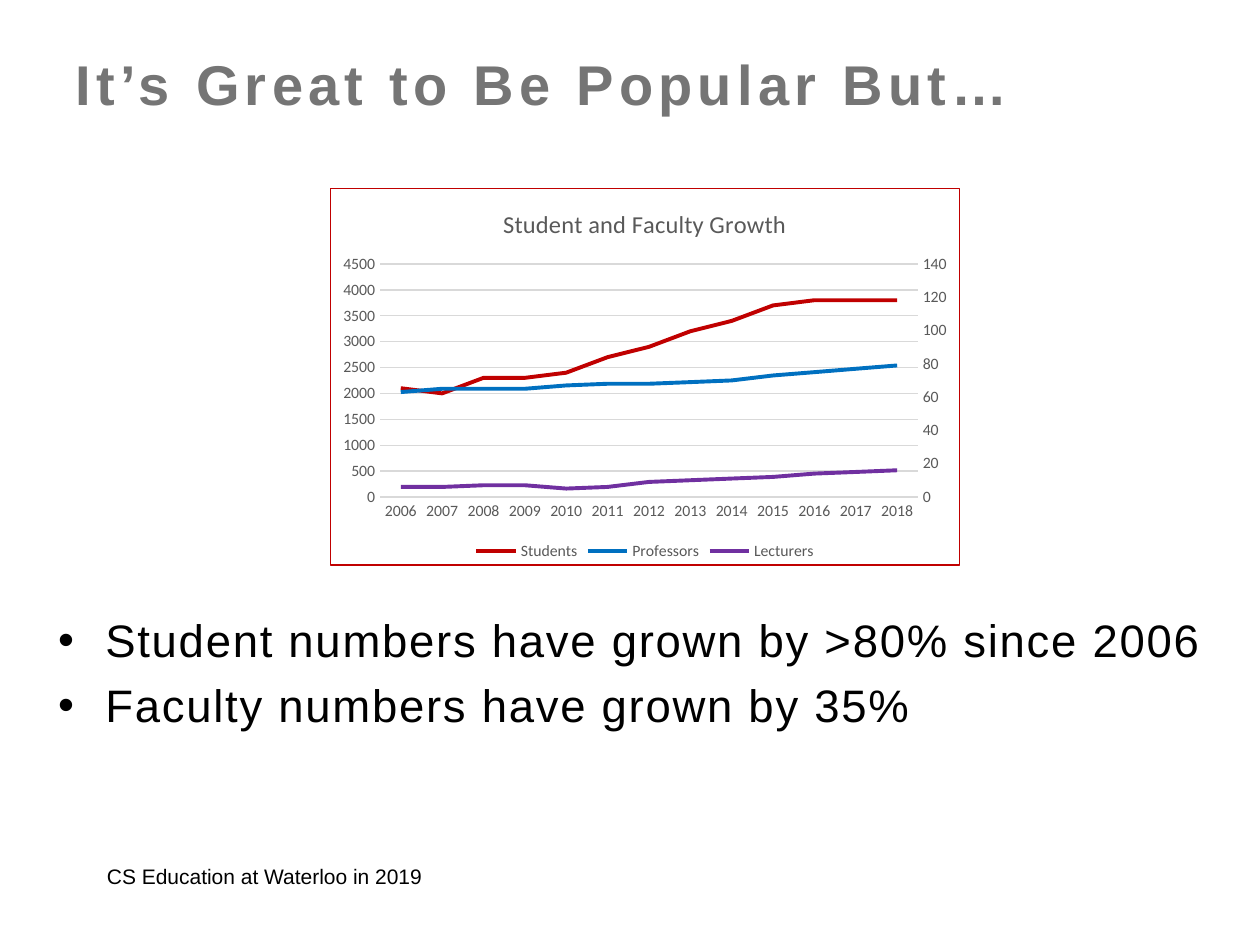
from copy import deepcopy

from lxml import etree
from pptx import Presentation
from pptx.chart.data import CategoryChartData
from pptx.dml.color import RGBColor
from pptx.enum.chart import XL_CHART_TYPE, XL_LEGEND_POSITION, XL_TICK_MARK
from pptx.enum.text import MSO_ANCHOR, PP_ALIGN
from pptx.oxml import parse_xml
from pptx.oxml.ns import nsdecls, qn
from pptx.util import Pt

LINE_CHART = XL_CHART_TYPE.LINE
LEGEND_BOTTOM = XL_LEGEND_POSITION.BOTTOM
NO_TICK = XL_TICK_MARK.NONE
MIDDLE, TOP = MSO_ANCHOR.MIDDLE, MSO_ANCHOR.TOP
LEFT = PP_ALIGN.LEFT

COLORS = {
    "title": "757575",
    "text": "000000",
    "chart text": "595959",
    "grid": "D9D9D9",
    "border": "C00000",
    "Students": "C00000",
    "Professors": "0070C0",
    "Lecturers": "7030A0",
}
YEARS = [str(year) for year in range(2006, 2019)]
GROWTH = {
    "Students": [2100, 2000, 2300, 2300, 2400, 2700, 2900, 3200, 3400, 3700, 3800, 3800, 3800],
    "Professors": [63, 65, 65, 65, 67, 68, 68, 69, 70, 73, 75, 77, 79],
    "Lecturers": [6, 6, 7, 7, 5, 6, 9, 10, 11, 12, 14, 15, 16],
}
STUDENT_MAX, STAFF_MAX = 4500, 140


def color(name):
    return RGBColor.from_string(COLORS[name])


class SlideBuilder:
    text_font = "Arial"
    chart_font = "Calibri"

    def __init__(self, deck):
        self.page = deck.slides.add_slide(deck.slide_layouts[1])

    def place(self, shape, left, top, width, height):
        shape.left, shape.top = Pt(left), Pt(top)
        shape.width, shape.height = Pt(width), Pt(height)

    def style(self, font, size, tone, family, bold=False):
        font.size, font.name, font.bold = Pt(size), family, bold
        font.color.rgb = color(tone)

    def fill_para(self, para, text, size, tone, bold=False, tracking=0):
        para.alignment = LEFT
        span = para.add_run()
        span.text = text
        self.style(para.font, size, tone, self.text_font, bold)
        if tracking:
            span.font._element.set("spc", str(tracking * 100))

    def title(self, text, *area):
        box = self.page.shapes.title
        self.place(box, *area)
        box.text_frame.vertical_anchor = MIDDLE
        self.fill_para(box.text_frame.paragraphs[0], text, 32, "title", True, 3)

    def bullets(self, items, *area):
        box = self.page.placeholders[1]
        self.place(box, *area)
        frame = box.text_frame
        frame.vertical_anchor = TOP
        frame.margin_top = Pt(7)
        for index, item in enumerate(items):
            para = frame.add_paragraph() if index else frame.paragraphs[0]
            para.space_before = Pt(6 if index else 0)
            properties = para._p.get_or_add_pPr()
            properties.set("marL", str(Pt(27)))
            properties.set("indent", str(Pt(-27)))
            etree.SubElement(properties, qn("a:buChar"), char="•")
            self.fill_para(para, item, 26, "text", tracking=1)

    def label(self, text, *area):
        box = self.page.shapes.add_textbox(*map(Pt, area))
        box.text_frame.word_wrap = True
        box.text_frame.vertical_anchor = MIDDLE
        self.fill_para(box.text_frame.paragraphs[0], text, 12, "text")

    def growth_chart(self, heading, *area):
        data = CategoryChartData()
        data.categories = YEARS
        for name, values in GROWTH.items():
            data.add_series(name, values)
        chart = self.page.shapes.add_chart(LINE_CHART, *map(Pt, area), data).chart
        self.style(chart.font, 10, "text", self.chart_font)
        chart.has_title = True
        para = chart.chart_title.text_frame.paragraphs[0]
        para.text = heading
        self.style(para.font, 14, "chart text", self.chart_font)
        chart.has_legend = True
        chart.legend.position = LEGEND_BOTTOM
        chart.legend.include_in_layout = False
        self.style(chart.legend.font, 9, "chart text", self.chart_font)
        for series in chart.plots[0].series:
            series.smooth = False
            series.format.line.color.rgb = color(series.name)
            series.format.line.width = Pt(2.25)
        self.axes(chart)
        self.border(chart)

    def axes(self, chart):
        years, values = chart.category_axis, chart.value_axis
        for axis in (years, values):
            axis.major_tick_mark = axis.minor_tick_mark = NO_TICK
            self.style(axis.tick_labels.font, 9, "chart text", self.chart_font)
        values.format.line.fill.background()
        values.has_major_gridlines = True
        for line in (years.format.line, values.major_gridlines.format.line):
            line.color.rgb = color("grid")
            line.width = Pt(0.75)
        values.minimum_scale = 0
        values.maximum_scale = STAFF_MAX
        if values._element.find(qn("c:crossBetween")) is None:
            between = etree.Element(qn("c:crossBetween"), val="between")
            values._element.find(qn("c:crosses")).addnext(between)
        self.right_axis(chart)
        values.maximum_scale = STUDENT_MAX
        values.major_unit = 500

    def right_axis(self, chart):
        left_plot = chart._chartSpace.find(".//" + qn("c:lineChart"))
        right_plot = deepcopy(left_plot)
        for series in left_plot.findall(qn("c:ser"))[1:]:
            left_plot.remove(series)
        right_plot.remove(right_plot.find(qn("c:ser")))
        left_plot.addnext(right_plot)
        years, values = chart.category_axis._element, chart.value_axis._element
        right_years, right_values = deepcopy(years), deepcopy(values)
        values.addnext(right_values)
        right_values.addnext(right_years)
        for reference, number in zip(right_plot.findall(qn("c:axId")), ("501", "502")):
            reference.set("val", number)
        for axis, own, other in ((right_years, "501", "502"), (right_values, "502", "501")):
            axis.find(qn("c:axId")).set("val", own)
            axis.find(qn("c:crossAx")).set("val", other)
        right_years.find(qn("c:delete")).set("val", "1")
        right_values.find(qn("c:axPos")).set("val", "r")
        right_values.find(qn("c:crosses")).set("val", "max")
        right_values.remove(right_values.find(qn("c:majorGridlines")))

    def border(self, chart):
        outline = parse_xml(
            f'<c:spPr {nsdecls("c", "a")}><a:noFill/><a:ln w="{Pt(0.75)}"><a:solidFill>'
            f'<a:srgbClr val="{COLORS["border"]}"/></a:solidFill></a:ln></c:spPr>'
        )
        chart._chartSpace.find(qn("c:chart")).addnext(outline)


def main():
    deck = Presentation()
    deck.slide_width, deck.slide_height = Pt(720), Pt(540)
    slide = SlideBuilder(deck)
    slide.title("It’s Great to Be Popular But…", 36, 22.3, 648, 50.4)
    slide.bullets(
        ["Student numbers have grown by >80% since 2006", "Faculty numbers have grown by 35%"],
        26, 342.7, 676, 123.8,
    )
    slide.label("CS Education at Waterloo in 2019", 54, 486, 432.7, 28.8)
    slide.growth_chart("Student and Faculty Growth", 188.6, 107.3, 360, 216)
    deck.save("out.pptx")


if __name__ == "__main__":
    main()
